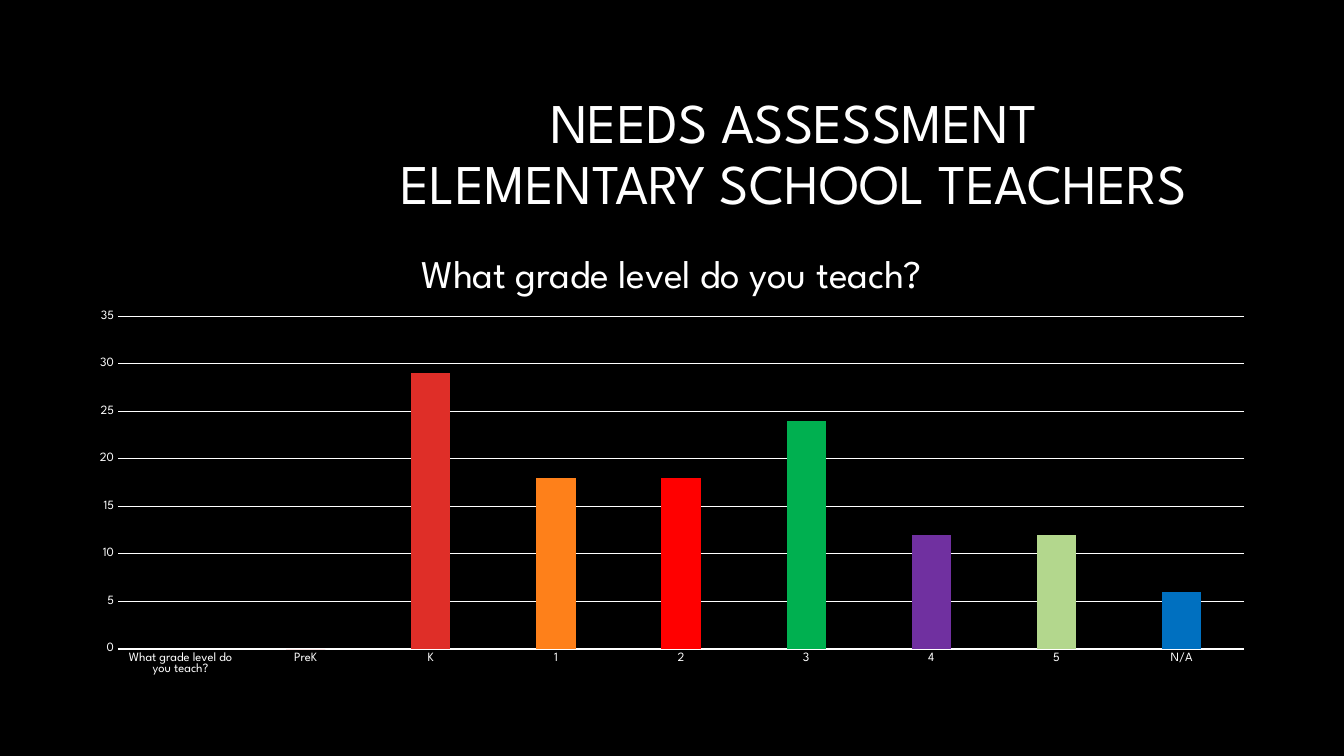
from dataclasses import dataclass

from lxml import etree
from pptx import Presentation
from pptx import util as u
from pptx.chart.data import CategoryChartData
from pptx.dml.color import RGBColor
from pptx.enum import chart as charts, text
from pptx.oxml.ns import qn

# Content
HEADING = "NEEDS ASSESSMENT\vELEMENTARY SCHOOL TEACHERS"
QUESTION = "What grade level do you teach?"
GRADES = [  # grade, share of teachers, bar colour
    (QUESTION, None, None),
    ("PreK", 0, None),
    ("K", 29, None),
    ("1", 18, "FE801A"),
    ("2", 18, "FF0000"),
    ("3", 24, "00B050"),
    ("4", 12, "7030A0"),
    ("5", 12, "B3D78D"),
    ("N/A", 6, "0070C0"),
]


@dataclass(frozen=True)
class Theme:
    font: str = "League Spartan"
    background: str = "000000"
    ink: str = "FFFFFF"
    bar: str = "DF2E28"
    heading_size: int = 40
    question_size: int = 28
    chart_size: int = 10
    axis_size: int = 9
    rule_width: float = 0.75


THEME = Theme()

# Layout in inches on the slide
WIDTH, HEIGHT = 13.33, 7.5
HEADING_BOX = (3.16, 0.84, 9.42, 1.41)
CHART_BOX = (0.75, 2.4, 11.83, 4.4)
QUESTION_SPOT = (4.11, 2.47)
PLOT_BOX = (1.17, 3.14, 11.17, 3.3)


def color(code):
    return RGBColor.from_string(code)


def fill(part, code):
    part.fill.solid()
    part.fill.fore_color.rgb = color(code)


def style_font(font, size):
    font.name = THEME.font
    font.size = u.Pt(size)
    font.color.rgb = color(THEME.ink)


def style_rule(line):
    line.color.rgb = color(THEME.ink)
    line.width = u.Pt(THEME.rule_width)


def place(parent, index, box, inner=False):
    """Fix a chart part at a slide position, stored as shares of the chart."""
    for old in parent.findall(qn("c:layout")):
        parent.remove(old)
    left, top, width, height = CHART_BOX
    layout = etree.Element(qn("c:layout"))
    manual = etree.SubElement(layout, qn("c:manualLayout"))
    settings = [("layoutTarget", "inner")] if inner else []
    settings += [("xMode", "edge"), ("yMode", "edge")]
    origins, extents = (left, top, 0, 0), (width, height, width, height)
    for tag, length, origin, extent in zip("xywh", box, origins, extents):
        settings.append((tag, (length - origin) / extent))
    for tag, value in settings:
        etree.SubElement(manual, qn(f"c:{tag}")).set("val", str(value))
    parent.insert(index, layout)


def add_heading(slide):
    frame = slide.shapes.add_textbox(*map(u.Inches, HEADING_BOX)).text_frame
    frame.word_wrap = True
    frame.vertical_anchor = text.MSO_ANCHOR.MIDDLE
    frame.text = HEADING
    paragraph = frame.paragraphs[0]
    paragraph.alignment = text.PP_ALIGN.CENTER
    paragraph.line_spacing = 0.9
    for run in paragraph.runs:
        style_font(run.font, THEME.heading_size)


def add_grade_chart(slide):
    data = CategoryChartData()
    data.categories = [grade for grade, _, _ in GRADES]
    data.add_series("Series 1", [share for _, share, _ in GRADES])
    chart = slide.shapes.add_chart(
        charts.XL_CHART_TYPE.COLUMN_CLUSTERED, *map(u.Inches, CHART_BOX), data
    ).chart
    style_font(chart.font, THEME.chart_size)
    chart.has_legend = False

    # Question above the bars
    chart.has_title = True
    title = chart.chart_title
    title.include_in_layout = False
    title.text_frame.text = QUESTION
    run = title.text_frame.paragraphs[0].runs[0]
    style_font(run.font, THEME.question_size)
    run.font.bold = False
    chart_root = chart.element.find(qn("c:chart"))
    place(chart_root.find(qn("c:title")), 1, QUESTION_SPOT)
    place(chart_root.find(qn("c:plotArea")), 0, PLOT_BOX, inner=True)

    # Axes
    for axis in (chart.category_axis, chart.value_axis):
        axis.major_tick_mark = axis.minor_tick_mark = charts.XL_TICK_MARK.NONE
        style_font(axis.tick_labels.font, THEME.axis_size)
    style_rule(chart.category_axis.format.line)
    values = chart.value_axis
    values.minimum_scale, values.maximum_scale, values.major_unit = 0, 35, 5
    values.format.line.fill.background()
    values.has_major_gridlines = True
    style_rule(values.major_gridlines.format.line)

    # Bars
    plot = chart.plots[0]
    plot.vary_by_categories = False
    plot.gap_width, plot.overlap = 219, -27
    series = plot.series[0]
    series.invert_if_negative = False
    fill(series.format, THEME.bar)
    for index, (_, _, code) in enumerate(GRADES):
        if code:
            fill(series.points[index].format, code)


def main():
    presentation = Presentation()
    presentation.slide_width = u.Inches(WIDTH)
    presentation.slide_height = u.Inches(HEIGHT)
    slide = presentation.slides.add_slide(presentation.slide_layouts[6])
    fill(slide.background, THEME.background)
    add_heading(slide)
    add_grade_chart(slide)
    presentation.save("out.pptx")


if __name__ == "__main__":
    main()
